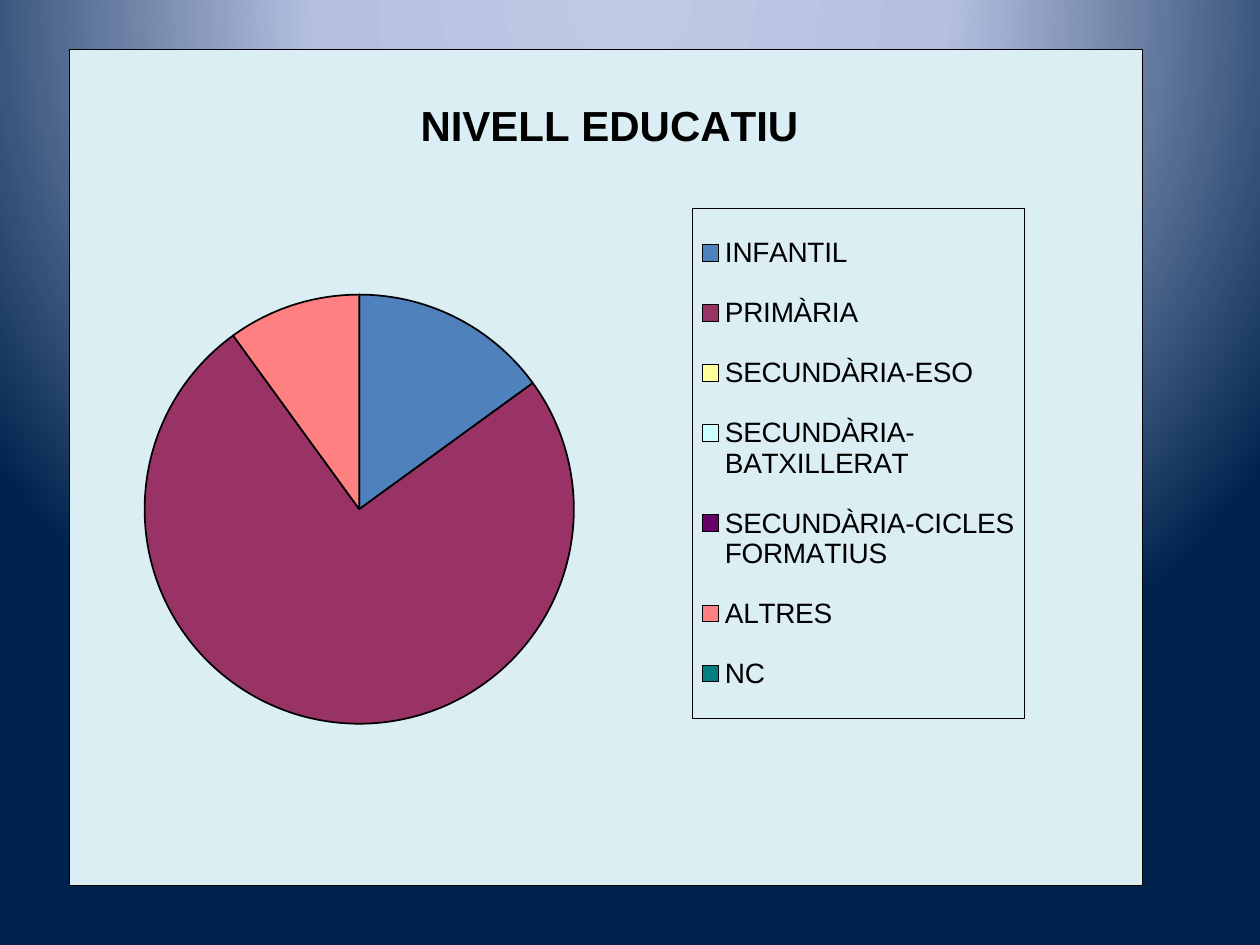
"""Build a slide with a pie chart of education levels."""
from pptx import Presentation
from pptx.chart.data import CategoryChartData
from pptx.dml.color import RGBColor
from pptx.enum.chart import XL_CHART_TYPE, XL_LEGEND_POSITION
from pptx.oxml import parse_xml
from pptx.oxml.ns import nsdecls
from pptx.util import Inches, Pt

PIE = XL_CHART_TYPE.PIE
RIGHT = XL_LEGEND_POSITION.RIGHT
FONT = "Arial"
COLORS = {
    "glow": "BFC9E5", "haze": "B5C0E0", "navy": "00234D",
    "panel": "DBEEF4", "ink": "000000",
}
LEVELS = [
    ("INFANTIL", 15, "4F81BD"),
    ("PRIMÀRIA", 75, "993366"),
    ("SECUNDÀRIA-ESO", 0, "FFFF99"),
    ("SECUNDÀRIA-BATXILLERAT", 0, "CCFFFF"),
    ("SECUNDÀRIA-CICLES FORMATIUS", 0, "660066"),
    ("ALTRES", 10, "FF8080"),
    ("NC", 0, "008080"),
]


def set_layout(follower, target="", **fractions):
    """Place a chart part by fractions of the chart, ahead of its follower."""
    parent = follower.getparent()
    for old in parent.xpath("c:layout"):
        parent.remove(old)
    inner = f'<c:layoutTarget val="{target}"/>' if target else ""
    sizes = "".join(f'<c:{key} val="{value}"/>' for key, value in fractions.items())
    follower.addprevious(parse_xml(
        f'<c:layout {nsdecls("c")}><c:manualLayout>{inner}<c:xMode val="edge"/>'
        f'<c:yMode val="edge"/>{sizes}</c:manualLayout></c:layout>'))


def set_frame(follower, fill, width):
    """Give a chart part a fill and a thin outline."""
    follower.addprevious(parse_xml(
        f'<c:spPr {nsdecls("c", "a")}>{fill}<a:ln w="{Pt(width)}"><a:solidFill>'
        f'<a:srgbClr val="{COLORS["ink"]}"/></a:solidFill></a:ln></c:spPr>'))


deck = Presentation()
deck.slide_width, deck.slide_height = Inches(10), Inches(7.5)
page = deck.slides.add_slide(deck.slide_layouts[6])

stops = "".join(
    f'<a:gs pos="{percent * 1000}"><a:srgbClr val="{COLORS[name]}"/></a:gs>'
    for percent, name in [(0, "glow"), (40, "haze"), (100, "navy")])
page.element.cSld.insert(0, parse_xml(
    f'<p:bg {nsdecls("p", "a")}><p:bgPr><a:gradFill rotWithShape="1">'
    f'<a:gsLst>{stops}</a:gsLst><a:path path="circle">'
    '<a:fillToRect l="50000" t="-80000" r="50000" b="180000"/></a:path>'
    '</a:gradFill><a:effectLst/></p:bgPr></p:bg>'))

data = CategoryChartData()
data.categories = [name for name, value, color in LEVELS]
data.add_series("Series 1", [value for name, value, color in LEVELS])
chart = page.shapes.add_chart(
    PIE, Inches(0.55), Inches(0.39), Inches(8.52), Inches(6.64), data).chart
ink = RGBColor.from_string(COLORS["ink"])
chart.font.size = Pt(8)
chart.font.name = FONT
chart.font.color.rgb = ink

chart.has_title = True
title = chart.chart_title.text_frame.paragraphs[0]
title.text = "NIVELL EDUCATIU"
title.font.size = Pt(24)
title.font.bold = True
title.font.name = FONT
title.font.color.rgb = ink

chart.has_legend = True
legend = chart.legend
legend.position = RIGHT
legend.include_in_layout = False
legend.font.size = Pt(16)
legend.font.name = FONT
legend.font.color.rgb = ink

plot = chart.plots[0]
plot.vary_by_categories = True
for index, (name, value, color) in enumerate(LEVELS):
    point = plot.series[0].points[index].format
    point.fill.solid()
    point.fill.fore_color.rgb = RGBColor.from_string(color)
    point.line.color.rgb = ink
    point.line.width = Pt(1)

space = chart.element
set_layout(space.xpath("c:chart/c:title/c:overlay")[0], x=0.32, y=0.05)
set_layout(space.xpath("c:chart/c:plotArea/c:pieChart")[0], "inner",
           x=0.07, y=0.22, w=0.4, h=0.66)
set_layout(space.xpath("c:chart/c:legend/c:overlay")[0],
           x=0.58, y=0.19, w=0.31, h=0.61)
set_frame(space.xpath("c:chart/c:legend/c:txPr")[0], "<a:noFill/>", 0.25)
panel = f'<a:solidFill><a:srgbClr val="{COLORS["panel"]}"/></a:solidFill>'
set_frame(space.xpath("c:txPr")[0], panel, 0.25)

deck.save("out.pptx")
